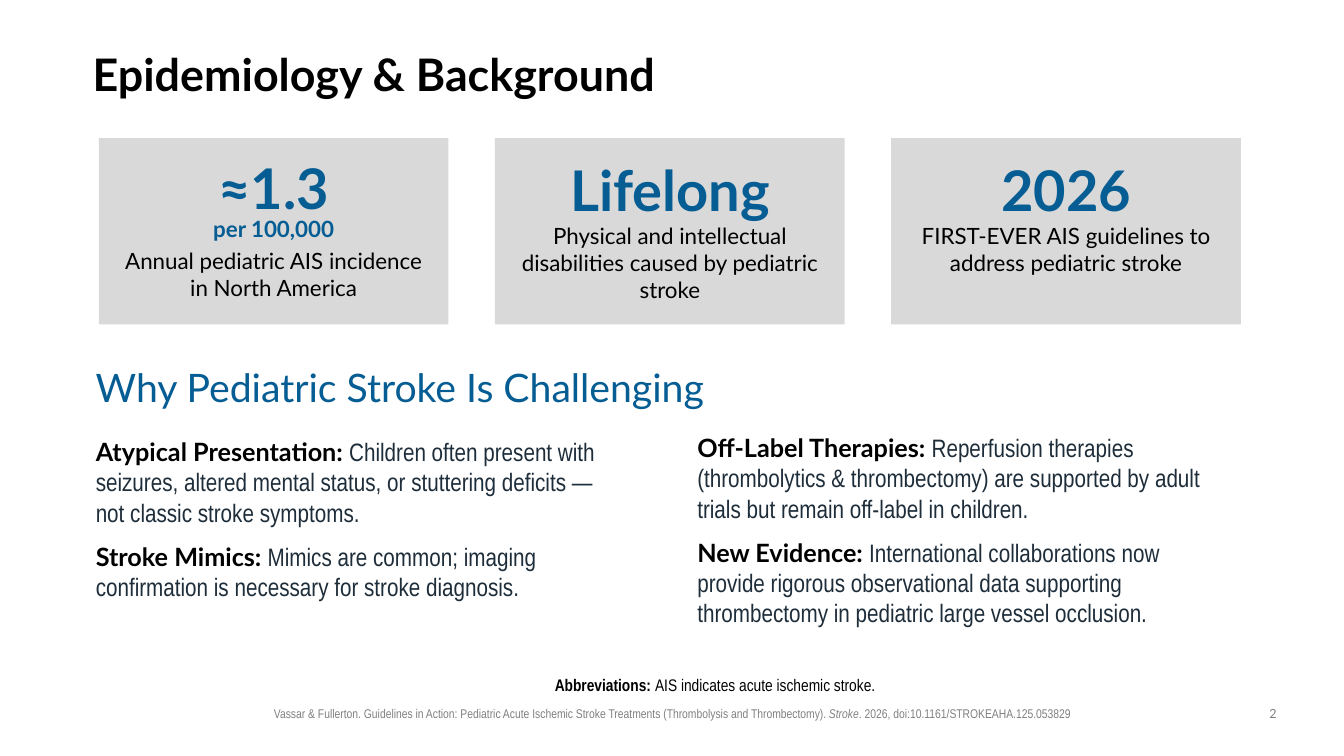
from pptx import Presentation
from pptx.dml.color import RGBColor
from pptx.enum.shapes import MSO_SHAPE
from pptx.enum.text import MSO_ANCHOR, PP_ALIGN
from pptx.util import Pt

BLUE = RGBColor(0x05, 0x5D, 0x93)
BLACK = RGBColor(0, 0, 0)
INK = RGBColor(0x1E, 0x2D, 0x3A)
GRAY = RGBColor(0x80, 0x80, 0x80)
CARD = RGBColor(0xD9, 0xD9, 0xD9)
HEAD, BODY = "Lato", "Arial Narrow"

TITLE = "Epidemiology & Background"
TOPIC = "Why Pediatric Stroke Is Challenging"
CARDS = [
    ("≈1.3", "per 100,000", "Annual pediatric AIS incidence in North America"),
    ("Lifelong", "", "Physical and intellectual disabilities caused by pediatric stroke"),
    ("2026", "", "FIRST-EVER AIS guidelines to address pediatric stroke"),
]
POINTS = [
    (68.4, 308.2, 0, [
        ("Atypical Presentation: ", "Children often present with seizures, altered mental "
         "status, or stuttering deficits — not classic stroke symptoms."),
        ("Stroke Mimics: ", "Mimics are common; imaging confirmation is necessary for "
         "stroke diagnosis."),
    ]),
    (491, 305.3, 7.2, [
        ("Off-Label Therapies: ", "Reperfusion therapies (thrombolytics & thrombectomy) are "
         "supported by adult trials but remain off-label in children."),
        ("New Evidence: ", "International collaborations now provide rigorous observational "
         "data supporting thrombectomy in pediatric large vessel occlusion."),
    ]),
]
ABBREV = ("Abbreviations: ", "AIS indicates acute ischemic stroke.")
CITE = (
    "Vassar & Fullerton. Guidelines in Action: Pediatric Acute Ischemic Stroke Treatments "
    "(Thrombolysis and Thrombectomy). ",
    "Stroke",
    ". 2026, doi:10.1161/STROKEAHA.125.053829",
)
PAGE = "2"

deck = Presentation()
deck.slide_width, deck.slide_height = Pt(960), Pt(540)
slide = deck.slides.add_slide(deck.slide_layouts[6])


def run(text, size=18, font=HEAD, color=BLACK, bold=False, italic=False):
    return text, size, font, color, bold, italic


def write(paras, left, top, width, height, inset=(7.2, 3.6, 7.2, 3.6), anchor=MSO_ANCHOR.TOP,
          align=PP_ALIGN.LEFT, lines=(), before=0, after=0):
    frame = slide.shapes.add_textbox(Pt(left), Pt(top), Pt(width), Pt(height)).text_frame
    frame.word_wrap = True
    frame.vertical_anchor = anchor
    (frame.margin_left, frame.margin_top,
     frame.margin_right, frame.margin_bottom) = map(Pt, inset)
    for i, runs in enumerate(paras):
        para = frame.add_paragraph() if i else frame.paragraphs[0]
        para.alignment = align
        para.space_before = Pt(before if i else 0)
        para.space_after = Pt(after)
        if i < len(lines):
            para.line_spacing = lines[i]
        for j, (text, size, font, color, bold, italic) in enumerate(runs):
            if j and text.startswith("\n"):
                para.add_line_break()
            part = para.add_run()
            part.text = text.lstrip("\n")
            face = part.font
            face.size, face.name = Pt(size), font
            face.bold, face.italic = bold, italic
            face.color.rgb = color


write([[run(TITLE, size=32, bold=True)]], 66.2, 28.8, 828, 51.8,
      inset=(0, 0, 0, 0), anchor=MSO_ANCHOR.MIDDLE, lines=[0.9])

WIDE, STEP = 249.8, 283
for i, (big, unit, note) in enumerate(CARDS):
    left = 70.6 + i * STEP
    card = slide.shapes.add_shape(MSO_SHAPE.RECTANGLE, Pt(left), Pt(98.6), Pt(WIDE), Pt(133.2))
    card.shadow.inherit = False
    card.fill.solid()
    card.fill.fore_color.rgb = CARD
    card.line.fill.background()
    first = [run(big, size=40, color=BLUE, bold=True)]
    if unit:
        first.append(run("\n" + unit, size=16, color=BLUE, bold=True))
    write([first, [run(note, size=16)]], left + 6.4, 115.2 if unit else 107.3, WIDE - 12.8, 108,
          align=PP_ALIGN.CENTER, lines=[0.8] if unit else [], before=4 if unit else 0)

FLUSH = (0, 3.6, 7.2, 3.6)
write([[run(TOPIC, size=28, color=BLUE)]], 68.4, 262.1, 741.6, 35.3, inset=FLUSH, lines=[0.8])

for left, top, pad, items in POINTS:
    write([[run(name, bold=True), run(text, font=BODY, color=INK)] for name, text in items],
          left, top, 383, 140, inset=(pad, 3.6, 7.2, 3.6), after=10)

write([[run(text, size=9, font=BODY, color=GRAY, italic=i == 1) for i, text in enumerate(CITE)]],
      169.9, 500.4, 620.6, 18, align=PP_ALIGN.CENTER)
write([[run(PAGE, size=9, color=GRAY)]], 894.2, 500.4, 30.2, 18.7, align=PP_ALIGN.CENTER)
write([[run(text, size=12, font=BODY, bold=i == 0) for i, text in enumerate(ABBREV)]],
      120.2, 473.8, 788.4, 26.6, inset=FLUSH, anchor=MSO_ANCHOR.BOTTOM,
      align=PP_ALIGN.CENTER, lines=[0.9])

deck.save("out.pptx")
